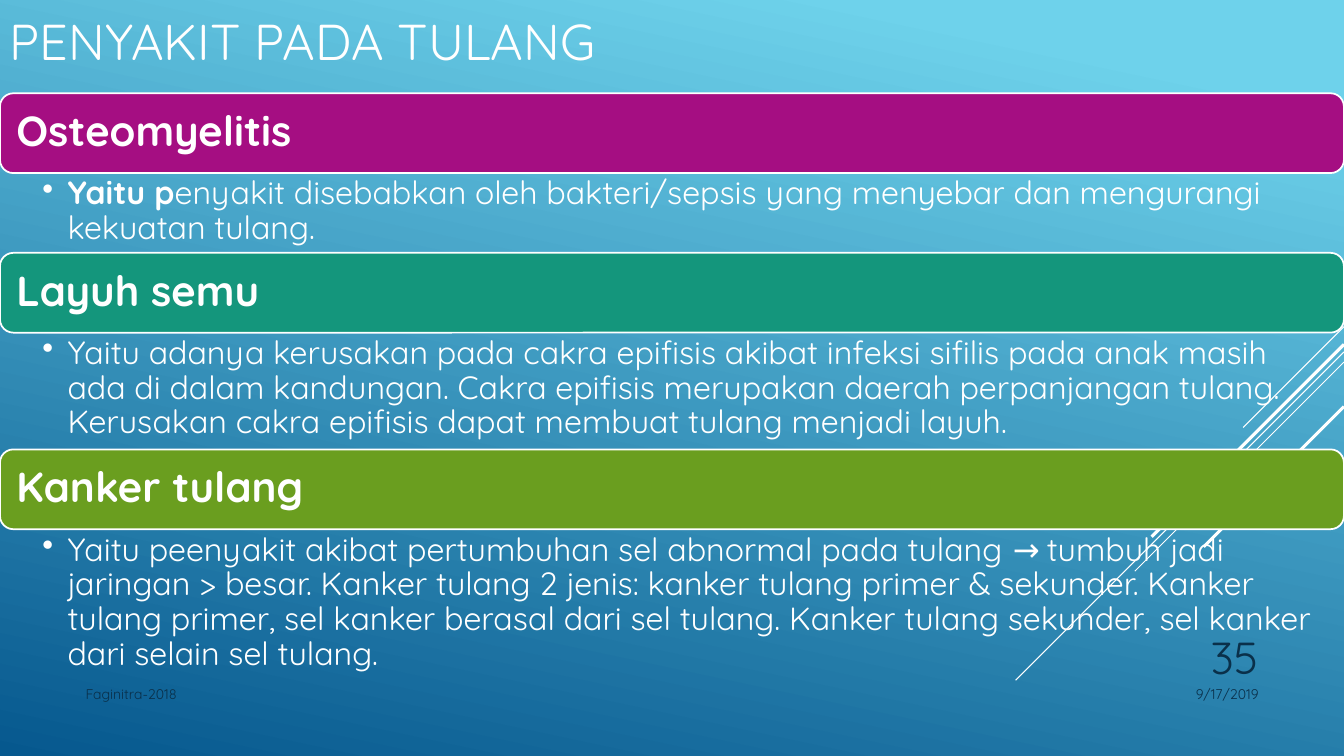
from lxml import etree
from pptx import Presentation
from pptx import util as u
from pptx.dml.color import RGBColor
from pptx.enum import shapes, text
from pptx.oxml.ns import qn

WHITE = RGBColor(0xFF, 0xFF, 0xFF)
SKY = RGBColor(0x6E, 0xD2, 0xEB)
OCEAN = RGBColor(0x06, 0x58, 0x8E)
NAVY = RGBColor(0x0A, 0x30, 0x4A)
MAGENTA = RGBColor(0xA5, 0x0E, 0x82)
TEAL = RGBColor(0x14, 0x96, 0x7C)
GREEN = RGBColor(0x6A, 0x9E, 0x1F)

COLUMNS, ROWS = 16, 9
BAR_HEIGHT = 0.95
BAR_INSET = 0.05

DISEASES = [
    ("Osteomyelitis", MAGENTA, 0.95, [
        ("Yaitu p", True),
        ("enyakit disebabkan oleh bakteri/sepsis yang menyebar dan "
         "mengurangi kekuatan tulang.", False)]),
    ("Layuh semu", TEAL, 1.39, [
        ("Yaitu adanya kerusakan pada cakra epifisis akibat infeksi sifilis "
         "pada anak masih ada di dalam kandungan. Cakra epifisis merupakan "
         "daerah perpanjangan tulang. Kerusakan cakra epifisis dapat membuat "
         "tulang menjadi layuh.", False)]),
    ("Kanker tulang", GREEN, 2.24, [
        ("Yaitu peenyakit akibat pertumbuhan sel abnormal pada tulang → "
         "tumbuh jadi jaringan > besar. Kanker tulang 2 jenis: kanker tulang "
         "primer & sekunder. Kanker tulang primer, sel kanker berasal dari "
         "sel tulang. Kanker tulang sekunder, sel kanker dari selain sel "
         "tulang.", False)]),
]

DIAGONALS = [(3.89, 1.2, 0.75), (4.19, 3.91, 0.75), (4.31, 2.49, 0.75),
             (4.1, 2.29, 2.25), (4.84, 1.67, 2.25)]


class SlideBuilder:
    font = "Quicksand"

    def __init__(self, presentation):
        self.slide = presentation.slides.add_slide(presentation.slide_layouts[6])
        self.column = presentation.slide_width / COLUMNS
        self.row = presentation.slide_height / ROWS

    def place(self, left, top, width, height):
        return (round(left * self.column), round(top * self.row),
                round(width * self.column), round(height * self.row))

    def background(self, start, end, angle):
        fill = self.slide.background.fill
        fill.gradient()
        fill.gradient_angle = angle
        for stop, color, position in zip(fill.gradient_stops, (start, end), (0.1, 1)):
            stop.color.rgb = color
            stop.position = position

    def diagonal(self, top, span, width):
        right, start, drop, _ = self.place(COLUMNS, top, span, 0)
        line = self.slide.shapes.add_connector(
            shapes.MSO_CONNECTOR.STRAIGHT, right, start, right - drop, start + drop)
        line.line.color.rgb = WHITE
        line.line.width = u.Pt(width)
        etree.SubElement(line._element.spPr, qn("a:effectLst"))

    def bar(self, area, color):
        shape = self.slide.shapes.add_shape(
            shapes.MSO_SHAPE.ROUNDED_RECTANGLE, *self.place(*area))
        shape.shadow.inherit = False
        shape.fill.solid()
        shape.fill.fore_color.rgb = color
        shape.line.color.rgb = WHITE
        shape.line.width = u.Pt(1.25)

    def text(self, area, runs, size, color=WHITE, anchor=text.MSO_ANCHOR.TOP,
             align=text.PP_ALIGN.LEFT, insets=(0.1, 0.05, 0.1, 0.05),
             spacing=1.0, bullet=False):
        frame = self.slide.shapes.add_textbox(*self.place(*area)).text_frame
        frame.word_wrap = True
        frame.vertical_anchor = anchor
        (frame.margin_left, frame.margin_top,
         frame.margin_right, frame.margin_bottom) = map(u.Inches, insets)
        paragraph = frame.paragraphs[0]
        paragraph.alignment = align
        paragraph.line_spacing = spacing
        if bullet:
            self.bullet(paragraph)
        for words, bold in runs:
            run = paragraph.add_run()
            run.text = words
            run.font.name = self.font
            run.font.size = u.Pt(size)
            run.font.bold = bold
            run.font.color.rgb = color

    def bullet(self, paragraph):
        properties = paragraph._p.get_or_add_pPr()
        properties.set("lvl", "1")
        properties.set("marL", str(u.Inches(0.25)))
        properties.set("indent", str(-u.Inches(0.25)))
        etree.SubElement(properties, qn("a:buChar"), char="•")

    def disease(self, top, name, color, height, runs):
        self.bar((0, top, COLUMNS, BAR_HEIGHT), color)
        self.text((BAR_INSET, top + BAR_INSET, COLUMNS - 2 * BAR_INSET,
                   BAR_HEIGHT - 2 * BAR_INSET), [(name, True)], 30,
                  anchor=text.MSO_ANCHOR.MIDDLE, insets=(0.12,) * 4, spacing=0.9)
        self.text((0, top + BAR_HEIGHT, COLUMNS, height), runs, 23,
                  insets=(0.42, 0.04, 0.23, 0.04), spacing=0.9, bullet=True)


def main():
    presentation = Presentation()
    presentation.slide_width = u.Inches(13.33)
    presentation.slide_height = u.Inches(7.5)
    builder = SlideBuilder(presentation)
    builder.background(SKY, OCEAN, 258)
    for diagonal in DIAGONALS:
        builder.diagonal(*diagonal)
    builder.text((0, 0, 12.3, 0.95), [("PENYAKIT PADA TULANG", False)], 36,
                 anchor=text.MSO_ANCHOR.MIDDLE)
    top = 1.11
    for name, color, height, runs in DISEASES:
        builder.disease(top, name, color, height, runs)
        top += BAR_HEIGHT + height
    builder.text((13, 8.1, 2.1, 0.48), [("9/17/2019", False)], 10, NAVY,
                 align=text.PP_ALIGN.RIGHT)
    builder.text((0.9, 8.1, 9.9, 0.48), [("Faginitra-2018", False)], 10, NAVY)
    builder.text((13.6, 7.32, 1.5, 0.88), [("35", False)], 32, NAVY,
                 anchor=text.MSO_ANCHOR.BOTTOM, align=text.PP_ALIGN.RIGHT)
    presentation.save("out.pptx")


if __name__ == "__main__":
    main()
